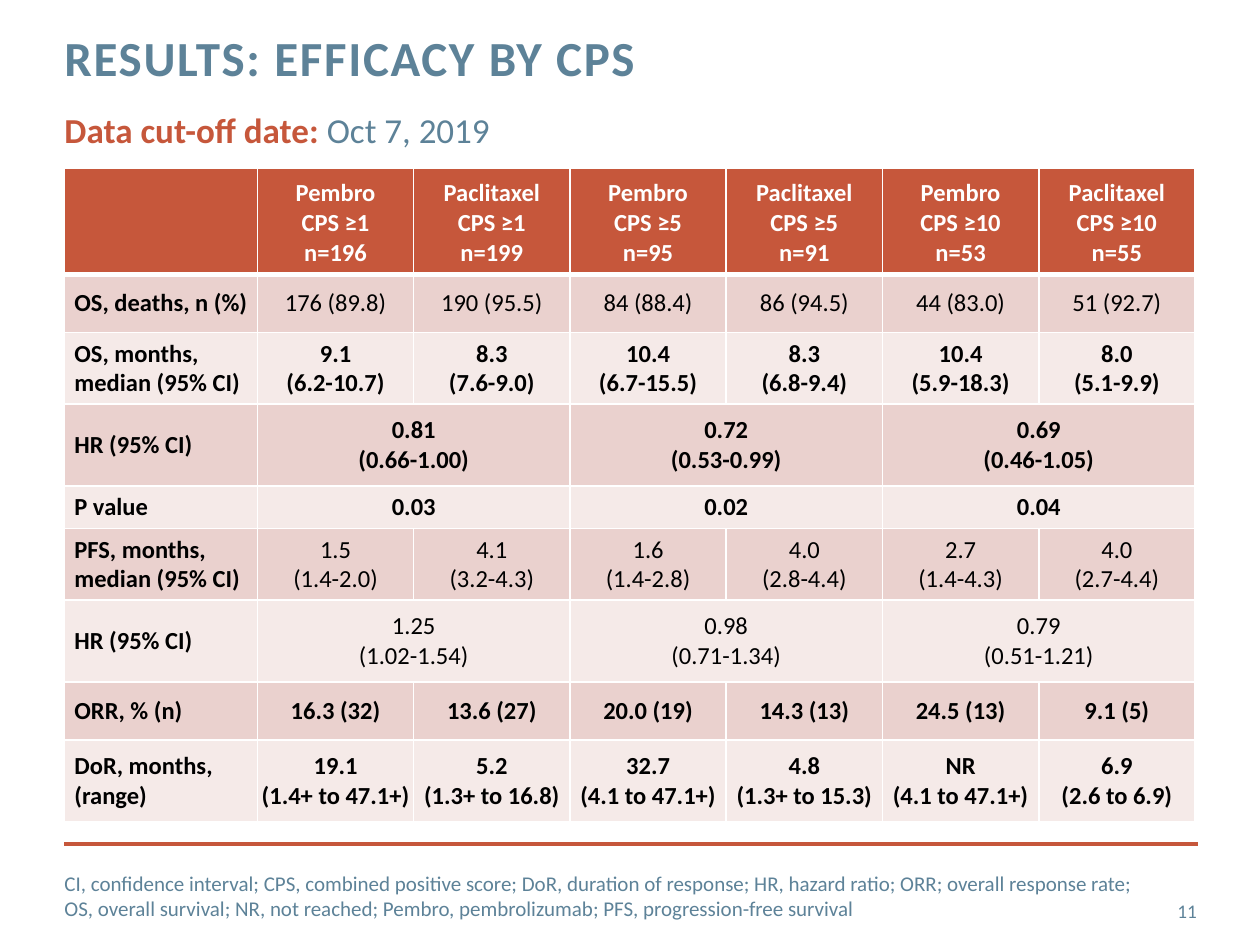
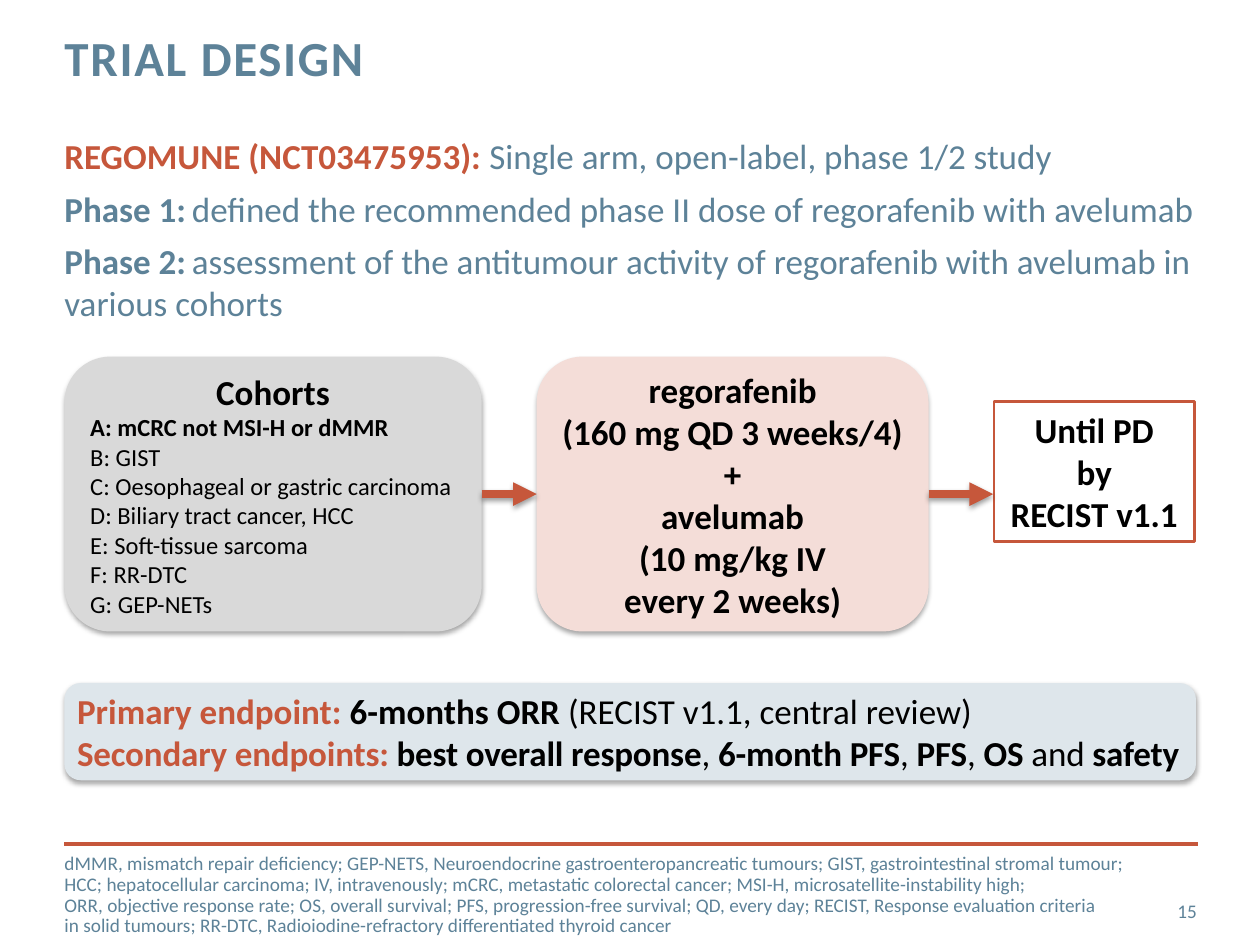
from dataclasses import dataclass
from typing import NamedTuple

from lxml import etree
from pptx import Presentation
from pptx.dml.color import RGBColor
from pptx.enum.shapes import MSO_CONNECTOR, MSO_SHAPE
from pptx.enum.text import MSO_ANCHOR, PP_ALIGN
from pptx.oxml.ns import qn
from pptx.util import Cm, Pt

FONT = "Calibri"
BLUE, RUST, BLACK, WHITE = "5D8298", "C6573B", "000000", "FFFFFF"
GREY, PINK, PALE_BLUE = "D9D9D9", "F4DDD8", "DEE6EB"
BAND_DARK, BAND_LIGHT = "EAD1CE", "F5EAE8"
LEFT, RIGHT = PP_ALIGN.LEFT, PP_ALIGN.RIGHT
CENTER = PP_ALIGN.CENTER
TOP, MIDDLE, BOTTOM = MSO_ANCHOR.TOP, MSO_ANCHOR.MIDDLE, MSO_ANCHOR.BOTTOM
STRAIGHT = MSO_CONNECTOR.STRAIGHT
RECTANGLE, ROUNDED = MSO_SHAPE.RECTANGLE, MSO_SHAPE.ROUNDED_RECTANGLE
MARGIN = 1.3
CONTENT_WIDTH = 22.81
LEFT_SIDE, RIGHT_SIDE = 1, 3


class Area(NamedTuple):
    left: float
    top: float
    width: float
    height: float

    def lengths(self) -> list:
        return [Cm(value) for value in self]


class Insets(NamedTuple):
    left: float = 0
    top: float = 0
    right: float = 0
    bottom: float = 0


class Span(NamedTuple):
    text: str
    color: str = BLACK
    bold: bool = False


@dataclass
class Line:
    spans: list[Span]
    size: float = 20
    align: PP_ALIGN = LEFT
    tracking: float = 0
    space_before: float = 0
    line_spacing: object = None
    tab: float = 0


@dataclass
class Box:
    area: Area
    preset: MSO_SHAPE
    fill: str
    lines: list[Line]
    outline: str = ""
    insets: Insets = Insets(0.25, 0.13, 0.25, 0.13)


@dataclass
class TableRow:
    label: str
    values: list[str]
    height: float
    bold: bool = False
    tight: bool = False


RESULT_HEADERS = [
    f"{drug}\nCPS ≥{score}\nn={count}"
    for drug, score, count in [
        ("Pembro", 1, 196), ("Paclitaxel", 1, 199), ("Pembro", 5, 95),
        ("Paclitaxel", 5, 91), ("Pembro", 10, 53), ("Paclitaxel", 10, 55),
    ]
]
RESULT_ROWS = [
    TableRow("OS, deaths, n (%)", ["176 (89.8)", "190 (95.5)", "84 (88.4)",
                                   "86 (94.5)", "44 (83.0)", "51 (92.7)"], 1.17),
    TableRow("OS, months, median (95% CI)",
             ["9.1\n(6.2-10.7)", "8.3\n(7.6-9.0)", "10.4\n(6.7-15.5)",
              "8.3\n(6.8-9.4)", "10.4\n(5.9-18.3)", "8.0\n(5.1-9.9)"], 1.17, bold=True),
    TableRow("HR (95% CI)", ["0.81\n(0.66-1.00)", "0.72\n(0.53-0.99)",
                             "0.69\n(0.46-1.05)"], 1.65, bold=True),
    TableRow("P value", ["0.03", "0.02", "0.04"], 0.69, bold=True),
    TableRow("PFS, months, median (95% CI)",
             ["1.5\n(1.4-2.0)", "4.1\n(3.2-4.3)", "1.6\n(1.4-2.8)",
              "4.0\n(2.8-4.4)", "2.7\n(1.4-4.3)", "4.0\n(2.7-4.4)"], 1.17),
    TableRow("HR (95% CI)", ["1.25\n(1.02-1.54)", "0.98\n(0.71-1.34)",
                             "0.79\n(0.51-1.21)"], 1.65),
    TableRow("ORR, % (n)", ["16.3 (32)", "13.6 (27)", "20.0 (19)",
                            "14.3 (13)", "24.5 (13)", "9.1 (5)"], 1.17, bold=True),
    TableRow("DoR, months, (range)",
             ["19.1\n(1.4+ to 47.1+)", "5.2\n(1.3+ to 16.8)", "32.7\n(4.1 to 47.1+)",
              "4.8\n(1.3+ to 15.3)", "NR\n(4.1 to 47.1+)", "6.9\n(2.6 to 6.9)"],
             1.65, bold=True, tight=True),
]
HEADER_HEIGHT = 2.13
LABEL_WIDTH, VALUE_WIDTH = 3.89, 3.15


def rgb(color: str) -> RGBColor:
    return RGBColor.from_string(color)


def format_run(run, size: float, color: str, bold: bool) -> None:
    run.font.name = FONT
    run.font.size = Pt(size)
    run.font.bold = bold
    run.font.color.rgb = rgb(color)


def write_lines(frame, lines: list[Line], anchor: MSO_ANCHOR, insets: Insets) -> None:
    frame.word_wrap = True
    frame.vertical_anchor = anchor
    frame.margin_left, frame.margin_top, frame.margin_right, frame.margin_bottom = (
        Cm(value) for value in insets)
    for index, line in enumerate(lines):
        paragraph = frame.add_paragraph() if index else frame.paragraphs[0]
        paragraph.alignment = line.align
        if index and line.space_before:
            paragraph.space_before = Pt(line.space_before)
        if line.line_spacing:
            paragraph.line_spacing = line.line_spacing
        if line.tab:
            tabs = etree.SubElement(paragraph._p.get_or_add_pPr(), qn("a:tabLst"))
            etree.SubElement(tabs, qn("a:tab"), pos=str(Cm(line.tab)), algn="l")
        for span in line.spans:
            run = paragraph.add_run()
            run.text = span.text
            format_run(run, line.size, span.color, span.bold)
            if line.tracking:
                run._r.get_or_add_rPr().set("spc", str(round(line.tracking * 100)))


def add_text(slide, area: Area, lines: list[Line], anchor: MSO_ANCHOR = TOP,
             insets: Insets = Insets()) -> None:
    shape = slide.shapes.add_textbox(*area.lengths())
    write_lines(shape.text_frame, lines, anchor, insets)


def set_shadow(properties, opacity: int = 0, distance: float = 0) -> None:
    effects = properties.find(qn("a:effectLst"))
    if effects is None:
        effects = etree.SubElement(properties, qn("a:effectLst"))
    if opacity:
        shadow = etree.SubElement(effects, qn("a:outerShdw"), blurRad=str(Pt(3.1)),
                                  dist=str(Pt(distance)), dir="5400000", rotWithShape="0")
        color = etree.SubElement(shadow, qn("a:srgbClr"), val=BLACK)
        etree.SubElement(color, qn("a:alpha"), val=str(opacity * 1000))


def add_box(slide, box: Box):
    shape = slide.shapes.add_shape(box.preset, *box.area.lengths())
    shape.fill.solid()
    shape.fill.fore_color.rgb = rgb(box.fill)
    if box.outline:
        shape.line.color.rgb = rgb(box.outline)
        shape.line.width = Pt(1.5)
    else:
        shape.line.fill.background()
    shape.shadow.inherit = False
    if box.preset == ROUNDED:
        set_shadow(shape._element.spPr, 35, 1.8)
    write_lines(shape.text_frame, box.lines, MIDDLE, box.insets)
    return shape


def add_line(slide, start: tuple, end: tuple, width: float):
    connector = slide.shapes.add_connector(
        STRAIGHT, *(Cm(value) for value in (*start, *end)))
    connector.line.color.rgb = rgb(RUST)
    connector.line.width = Pt(width)
    return connector


def add_arrow(slide, start: tuple, end: tuple):
    arrow = add_line(slide, start, end, 4.5)
    properties = arrow._element.spPr
    etree.SubElement(properties.find(qn("a:ln")), qn("a:tailEnd"), type="triangle")
    set_shadow(properties, 38, 1.6)
    return arrow


def add_base_slide(presentation, title: str, number: int, abbreviations: list[Line],
                   abbreviation_width: float):
    slide = presentation.slides.add_slide(presentation.slide_layouts[6])
    rule = add_line(slide, (MARGIN, 17.02), (24.16, 17.02), 2.25)
    set_shadow(rule._element.spPr)
    add_text(slide, Area(22.5, 17.86, 1.63, 1.02),
             [Line([Span(str(number), BLUE)], 11, RIGHT)], MIDDLE)
    add_text(slide, Area(MARGIN, 0.69, 18.21, 2.24),
             [Line([Span(title, BLUE, True)], 28, tracking=1, line_spacing=Pt(30))])
    add_text(slide, Area(MARGIN, 17.54, abbreviation_width, 1.02), abbreviations, MIDDLE)
    return slide


def style_cell(cell, fill: str, bottom_width: float) -> None:
    cell.fill.solid()
    cell.fill.fore_color.rgb = rgb(fill)
    properties = cell._tc.get_or_add_tcPr()
    widths = {"a:lnL": 1, "a:lnR": 1, "a:lnT": 1, "a:lnB": bottom_width}
    for position, (tag, width) in enumerate(widths.items()):
        border = etree.Element(qn(tag), w=str(Pt(width)))
        paint = etree.SubElement(border, qn("a:solidFill"))
        etree.SubElement(paint, qn("a:srgbClr"), val=WHITE)
        properties.insert(position, border)


def write_cell(cell, text: str, color: str, bold: bool, align: PP_ALIGN,
               anchor: MSO_ANCHOR, side_margin: float = 0.2) -> None:
    cell.vertical_anchor = anchor
    cell.margin_left = cell.margin_right = Cm(side_margin)
    cell.margin_top = cell.margin_bottom = Cm(0.13)
    cell.text_frame.text = text
    for paragraph in cell.text_frame.paragraphs:
        paragraph.alignment = align
        for run in paragraph.runs:
            format_run(run, 14, color, bold)


def add_results_table(slide) -> None:
    heights = [HEADER_HEIGHT] + [row.height for row in RESULT_ROWS]
    column_count = len(RESULT_HEADERS) + 1
    area = Area(MARGIN, 3.4, CONTENT_WIDTH, sum(heights))
    table = slide.shapes.add_table(len(heights), column_count, *area.lengths()).table
    for index, column in enumerate(table.columns):
        column.width = Cm(VALUE_WIDTH if index else LABEL_WIDTH)
    for index, height in enumerate(heights):
        table.rows[index].height = Cm(height)
        fill = (BAND_DARK if index % 2 else BAND_LIGHT) if index else RUST
        for cell in table.rows[index].cells:
            style_cell(cell, fill, 1 if index else 3)
    for index, header in enumerate(RESULT_HEADERS, 1):
        write_cell(table.cell(0, index), header, WHITE, True, CENTER, BOTTOM)
    for index, row in enumerate(RESULT_ROWS, 1):
        write_cell(table.cell(index, 0), row.label, BLACK, True, LEFT, MIDDLE)
        span = len(RESULT_HEADERS) // len(row.values)
        for position, value in enumerate(row.values):
            first = 1 + position * span
            cell = table.cell(index, first)
            if span > 1:
                cell.merge(table.cell(index, first + span - 1))
            write_cell(cell, value, BLACK, row.bold, CENTER, MIDDLE,
                       0 if row.tight else 0.2)


def build_efficacy_slide(presentation) -> None:
    abbreviations = (
        "CI, confidence interval; CPS, combined positive score; DoR, duration of response; "
        "HR, hazard ratio; ORR; overall response rate; OS, overall survival; NR, not reached; "
        "Pembro, pembrolizumab; PFS, progression-free survival")
    slide = add_base_slide(presentation, "RESULTS: EFFICACY BY CPS", 11,
                           [Line([Span(abbreviations, BLUE)], 12)], 22.02)
    add_results_table(slide)
    add_text(slide, Area(MARGIN, 2.06, 9.5, 1.12),
             [Line([Span("Data cut-off date: ", RUST, True), Span("Oct 7, 2019", BLUE)])],
             insets=Insets(0, 0.13, 0.25, 0.13))


def build_design_slide(presentation) -> None:
    abbreviations = [
        "dMMR, mismatch repair deficiency; GEP-NETS, Neuroendocrine gastroenteropancreatic "
        "tumours; GIST, gastrointestinal stromal tumour;",
        "HCC; hepatocellular carcinoma; IV, intravenously; mCRC, metastatic colorectal cancer; "
        "MSI-H, microsatellite-instability high;",
        "ORR, objective response rate; OS, overall survival; PFS, progression-free survival; "
        "QD, every day; RECIST, Response evaluation criteria",
        "in solid tumours; RR-DTC, Radioiodine-refractory differentiated thyroid cancer",
    ]
    slide = add_base_slide(
        presentation, "TRIAL DESIGN", 15,
        [Line([Span(text, BLUE)], 11, line_spacing=0.9) for text in abbreviations], 22.61)

    phases = [
        ("Phase 1:\t", "defined the recommended phase II dose of regorafenib with avelumab"),
        ("Phase 2:\t", "assessment of the antitumour activity of regorafenib with avelumab in "
                       "various cohorts"),
    ]
    study = Line([Span("REGOMUNE (NCT03475953): ", RUST, True),
                  Span("Single arm, open-label, phase 1/2 study", BLUE)])
    add_text(slide, Area(MARGIN, 2.59, 23.72, 4.11),
             [study] + [Line([Span(phase, BLUE, True), Span(aim, BLUE)],
                             space_before=6, tab=2.57) for phase, aim in phases],
             insets=Insets(0, 0.13, 0.25, 0.13))

    cohorts = ["A: mCRC not MSI-H or dMMR", "B: GIST", "C: Oesophageal or gastric carcinoma",
               "D: Biliary tract cancer, HCC", "E: Soft-tissue sarcoma", "F: RR-DTC",
               "G: GEP-NETs"]
    cohort_lines = [Line([Span("Cohorts", bold=True)], align=CENTER)] + [
        Line([Span(cohort, bold=index == 0)], 14) for index, cohort in enumerate(cohorts)]
    regimen = ["regorafenib", "(160 mg QD 3 weeks/4)", "+", "avelumab", "(10 mg/kg IV",
               "every 2 weeks)"]
    regimen_lines, stop_lines = (
        [Line([Span(text, bold=True)], align=CENTER) for text in texts]
        for texts in (regimen, ["Until PD", "by", "RECIST v1.1"]))
    cohort_box = add_box(slide, Box(Area(MARGIN, 7.19, 8.41, 5.54), ROUNDED, GREY, cohort_lines))
    regimen_box = add_box(slide, Box(Area(10.82, 7.19, 7.9, 5.54), ROUNDED, PINK, regimen_lines,
                                     insets=Insets()))
    add_box(slide, Box(Area(20.04, 8.1, 4.04, 2.82), RECTANGLE, WHITE, stop_lines, RUST))
    to_regimen = add_arrow(slide, (9.71, 9.96), (10.82, 9.96))
    to_regimen.begin_connect(cohort_box, RIGHT_SIDE)
    to_regimen.end_connect(regimen_box, LEFT_SIDE)
    to_stop = add_arrow(slide, (18.72, 9.96), (20.02, 9.96))
    to_stop.begin_connect(regimen_box, RIGHT_SIDE)

    primary = Line([Span("Primary endpoint: ", RUST, True), Span("6-months ORR", bold=True),
                    Span(" (RECIST v1.1, central review)")])
    secondary = Line([Span("Secondary endpoints: ", RUST, True),
                      Span("best overall response", bold=True), Span(", "),
                      Span("6-month PFS", bold=True), Span(", "), Span("PFS", bold=True),
                      Span(", "), Span("OS", bold=True), Span(" and "),
                      Span("safety", bold=True)], tracking=-0.1)
    add_box(slide, Box(Area(MARGIN, 13.77, CONTENT_WIDTH, 1.96), ROUNDED, PALE_BLUE,
                       [primary, secondary], insets=Insets(0.16, 0, 0, 0)))


def main() -> None:
    presentation = Presentation()
    presentation.slide_width = Cm(25.4)
    presentation.slide_height = Cm(19.05)
    build_efficacy_slide(presentation)
    build_design_slide(presentation)
    presentation.save("out.pptx")


if __name__ == "__main__":
    main()
